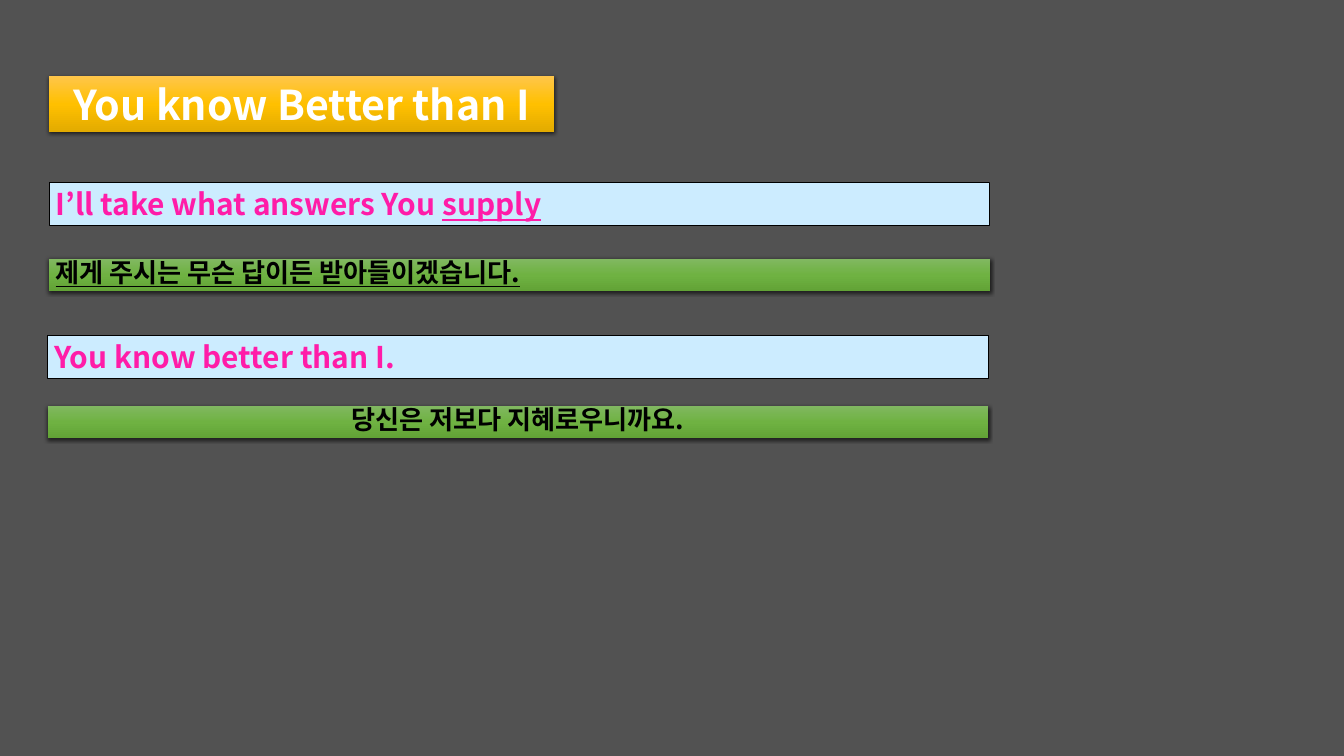
from lxml.etree import SubElement
from pptx import Presentation
from pptx.dml.color import RGBColor
from pptx.enum.shapes import MSO_SHAPE as Preset
from pptx.enum.text import MSO_ANCHOR as Anchor, MSO_AUTO_SIZE as AutoSize, PP_ALIGN as Align
from pptx.oxml.ns import qn
from pptx.util import Emu, Inches, Pt

# Content: runs are (text, underlined); boxes are (style, left, top, width, align, runs)
BOXES = [
    ("english", 0.73, 2.71, 14, Align.LEFT,
     [("I’ll take what answers You ", False), ("supply", True)]),
    ("korean", 0.73, 3.85, 14, Align.LEFT,
     [("제게 주시는 무슨 답이든 받아들이겠습니다.", True)]),
    ("english", 0.71, 4.99, 14, Align.LEFT, [("You know better than I.", False)]),
    ("korean", 0.71, 6.04, 14, Align.CENTER, [("당신은 저보다 지혜로우니까요.", False)]),
    ("title", 0.73, 1.13, 7.52, Align.CENTER, [("You know Better than I", False)]),
]

# Theme: a single fill colour is solid and outlined, three are a shadowed gradient
THEME = {
    "background": "525252",
    "font": "Noto Sans CJK KR",
    "outline": "000000",
    "shadow": "000000",
    "english": {"height": 0.64, "size": 32, "color": "FF1CA8", "fill": ["CCECFF"],
                "paragraph": {"space_before": Pt(6.4)}, "hanging": 0},
    "korean": {"height": 0.48, "size": 28, "color": "000000",
               "fill": ["81B861", "6FB242", "62A336"],
               "paragraph": {"space_before": Pt(14), "line_spacing": 0.8}, "hanging": 0.5},
    "title": {"height": 0.84, "size": 44, "color": "FFFFFF",
              "fill": ["FFC64B", "FFC000", "E3AB00"], "paragraph": {}, "hanging": 0},
}


def rgb(value):
    return RGBColor.from_string(value)


def apply(target, values):
    for name, value in values.items():
        setattr(target, name, value)


def paint_gradient(shape, colors):
    shape.fill.gradient()
    shape.fill.gradient_angle = 270
    stops = shape.element.spPr.find(qn("a:gradFill")).find(qn("a:gsLst"))
    for stop in list(stops):
        stops.remove(stop)
    for index, color in enumerate(colors):
        position = 100000 * index // (len(colors) - 1)
        stop = SubElement(stops, qn("a:gs"), pos=str(position))
        SubElement(stop, qn("a:srgbClr"), val=color)


def add_shadow(shape):
    effects = shape.element.spPr.find(qn("a:effectLst"))
    shadow = SubElement(effects, qn("a:outerShdw"), blurRad=str(Pt(4.5)), dist=str(Pt(1.5)),
                        dir="5400000", algn="ctr", rotWithShape="0")
    color = SubElement(shadow, qn("a:srgbClr"), val=THEME["shadow"])
    SubElement(color, qn("a:alpha"), val="63000")


def add_box(slide, style_name, left, top, width, align, runs):
    style = THEME[style_name]
    shape = slide.shapes.add_shape(
        Preset.RECTANGLE, *map(Inches, (left, top, width, style["height"])))
    shape.shadow.inherit = False

    # Fill, outline and shadow
    if len(style["fill"]) == 1:
        shape.fill.solid()
        shape.fill.fore_color.rgb = rgb(style["fill"][0])
        shape.line.color.rgb = rgb(THEME["outline"])
        shape.line.width = Pt(0.75)
    else:
        paint_gradient(shape, style["fill"])
        shape.line.fill.background()
        add_shadow(shape)

    # Text
    frame = shape.text_frame
    apply(frame, {"word_wrap": True, "auto_size": AutoSize.NONE,
                  "vertical_anchor": Anchor.MIDDLE})
    paragraph = frame.paragraphs[0]
    apply(paragraph, {"alignment": align, **style["paragraph"]})
    if style["hanging"]:
        indent = Inches(style["hanging"])
        properties = paragraph._p.get_or_add_pPr()
        properties.set("marL", str(indent))
        properties.set("indent", str(Emu(-indent)))
    for text, underlined in runs:
        run = paragraph.add_run()
        run.text = text
        apply(run.font, {"name": THEME["font"], "size": Pt(style["size"]),
                         "bold": True, "underline": underlined})
        run.font.color.rgb = rgb(style["color"])
        SubElement(run._r.get_or_add_rPr(), qn("a:ea"), typeface=THEME["font"])


def main():
    presentation = Presentation()
    apply(presentation, {"slide_width": Inches(20), "slide_height": Inches(11.25)})
    slide = presentation.slides.add_slide(presentation.slide_layouts[6])
    slide.background.fill.solid()
    slide.background.fill.fore_color.rgb = rgb(THEME["background"])
    for box in BOXES:
        add_box(slide, *box)
    presentation.save("out.pptx")


if __name__ == "__main__":
    main()
